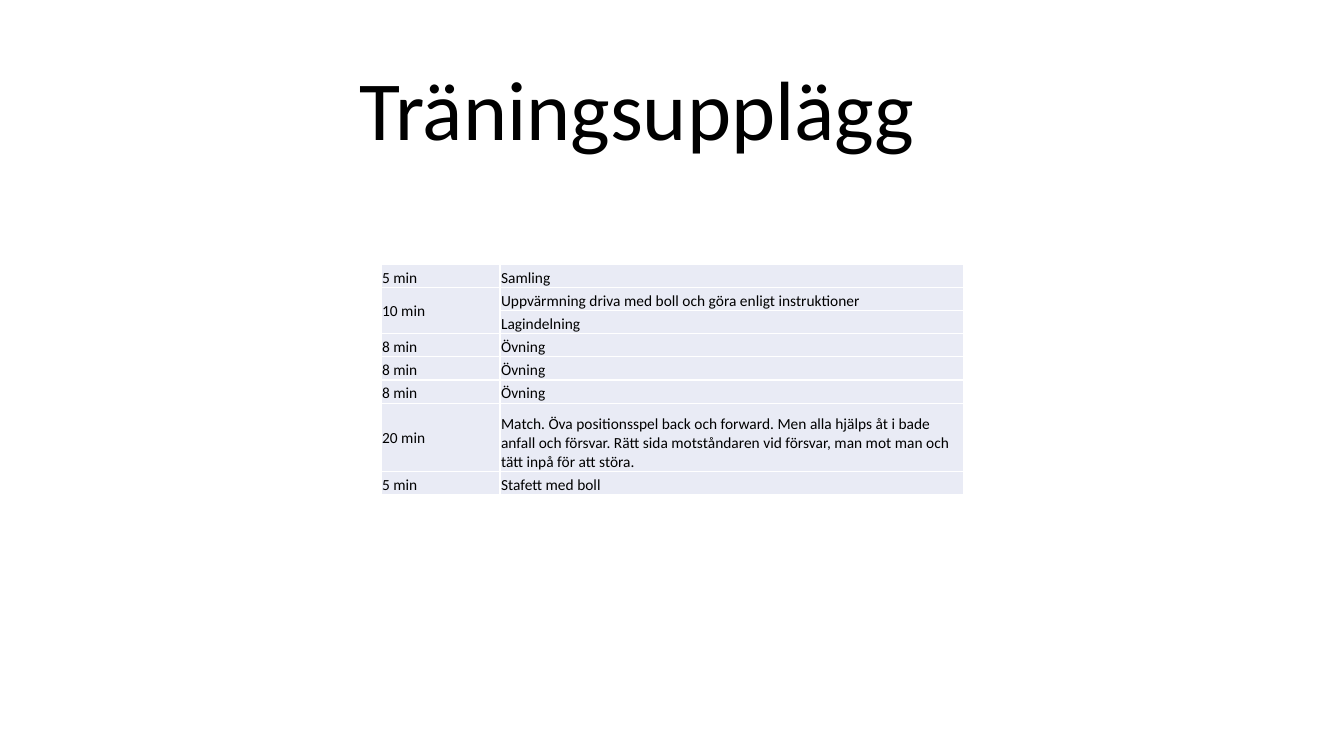
from dataclasses import dataclass

from lxml import etree
from pptx import Presentation
from pptx.dml.color import RGBColor
from pptx.enum import text
from pptx.oxml import ns
from pptx.util import Pt

PX = 9144  # EMU per px, 100 px to the inch
FONT = "Calibri"
BLACK = RGBColor(0x00, 0x00, 0x00)
WHITE = RGBColor(0xFF, 0xFF, 0xFF)
PALE_BLUE = RGBColor(0xE9, 0xEB, 0xF5)

TABLE_LEFT, TABLE_TOP = 378, 262
COLUMN_WIDTHS = (118, 460)
ROW_HEIGHT = 23
BOTTOM, MIDDLE = text.MSO_ANCHOR.BOTTOM, text.MSO_ANCHOR.MIDDLE


@dataclass(frozen=True)
class Activity:
    time: str
    descriptions: tuple[str, ...]
    height: int = ROW_HEIGHT
    time_anchor: text.MSO_ANCHOR = BOTTOM


ACTIVITIES = (
    Activity("5 min", ("Samling",)),
    Activity(
        "10 min",
        ("Uppvärmning driva med boll och göra enligt instruktioner", "Lagindelning"),
        time_anchor=MIDDLE,
    ),
    *[Activity("8 min", ("Övning",))] * 3,
    Activity(
        "20 min",
        (
            "Match. Öva positionsspel back och forward. Men alla hjälps åt i bade "
            "anfall och försvar. Rätt sida motståndaren vid försvar, man mot man och "
            "tätt inpå för att störa.",
        ),
        height=68,
        time_anchor=MIDDLE,
    ),
    Activity("5 min", ("Stafett med boll",)),
)


def format_runs(paragraph, size: int) -> None:
    for run in paragraph.runs:
        run.font.name = FONT
        run.font.size = Pt(size)
        run.font.bold = False
        run.font.color.rgb = BLACK


def add_borders(cell) -> None:
    """Put a thin white line on all four sides; lines must precede the fill."""
    properties = cell._tc.get_or_add_tcPr()
    for index, side in enumerate(("lnL", "lnR", "lnT", "lnB")):
        line = etree.Element(ns.qn(f"a:{side}"), w=str(Pt(1)))
        fill = etree.SubElement(line, ns.qn("a:solidFill"))
        etree.SubElement(fill, ns.qn("a:srgbClr"), val=str(WHITE))
        properties.insert(index, line)


def style_cell(cell) -> None:
    cell.margin_left = cell.margin_right = cell.margin_top = PX
    cell.margin_bottom = 0
    cell.vertical_anchor = BOTTOM
    cell.fill.solid()
    cell.fill.fore_color.rgb = PALE_BLUE
    add_borders(cell)


def write_cell(cell, wording: str, anchor: text.MSO_ANCHOR = BOTTOM) -> None:
    cell.text_frame.text = wording
    cell.vertical_anchor = anchor
    format_runs(cell.text_frame.paragraphs[0], 11)


def add_title(slide) -> None:
    title = slide.shapes.title
    title.left, title.top, title.width, title.height = (
        PX * length for length in (132, 50, 1000, 112)
    )
    title.text_frame.text = "Träningsupplägg"
    title.text_frame.vertical_anchor = BOTTOM
    paragraph = title.text_frame.paragraphs[0]
    paragraph.alignment = text.PP_ALIGN.CENTER
    paragraph.line_spacing = 0.9
    format_runs(paragraph, 60)


def add_schedule(slide) -> None:
    heights = [a.height for a in ACTIVITIES for _ in a.descriptions]
    table = slide.shapes.add_table(
        len(heights), len(COLUMN_WIDTHS),
        PX * TABLE_LEFT, PX * TABLE_TOP, PX * sum(COLUMN_WIDTHS), PX * sum(heights),
    ).table
    table.first_row = table.horz_banding = False
    for column, width in zip(table.columns, COLUMN_WIDTHS):
        column.width = PX * width
    for row, height in zip(table.rows, heights):
        row.height = PX * height
    for cell in table.iter_cells():
        style_cell(cell)

    first = 0
    for activity in ACTIVITIES:
        last = first + len(activity.descriptions) - 1
        time_cell = table.cell(first, 0)
        if last > first:
            time_cell.merge(table.cell(last, 0))
        write_cell(time_cell, activity.time, activity.time_anchor)
        for row, description in enumerate(activity.descriptions, first):
            write_cell(table.cell(row, 1), description)
        first = last + 1


def main() -> None:
    presentation = Presentation()
    presentation.slide_width, presentation.slide_height = PX * 1333, PX * 750
    title_only = presentation.slide_layouts[5]
    slide = presentation.slides.add_slide(title_only)
    add_title(slide)
    add_schedule(slide)
    presentation.save("out.pptx")


if __name__ == "__main__":
    main()
